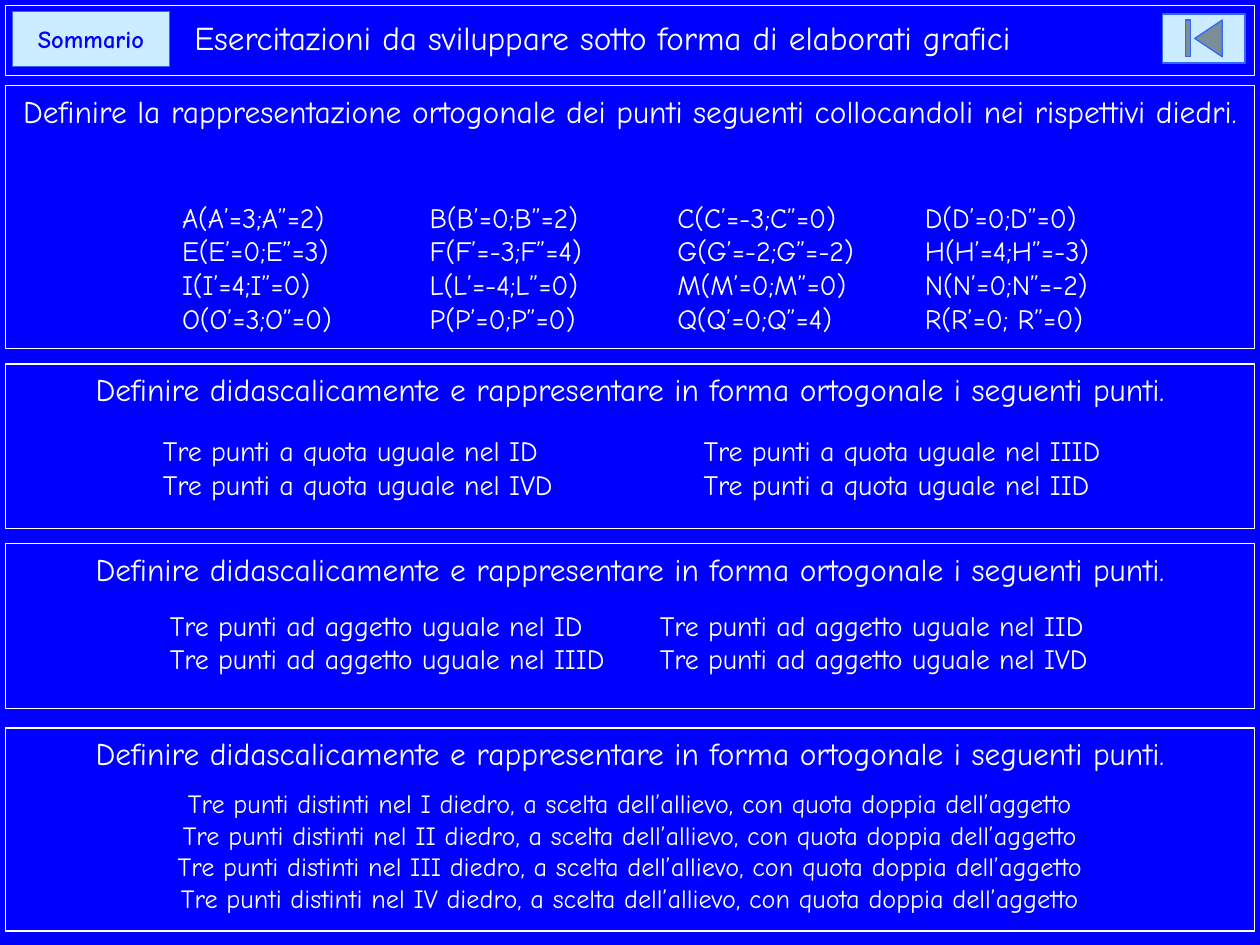
from lxml import etree
from pptx import Presentation
from pptx.dml.color import RGBColor
from pptx.enum.shapes import MSO_SHAPE
from pptx.enum.text import MSO_ANCHOR, MSO_AUTO_SIZE, PP_ALIGN
from pptx.oxml.ns import qn
from pptx.util import Pt

RECTANGLE = MSO_SHAPE.RECTANGLE
BUTTON_BLANK = MSO_SHAPE.ACTION_BUTTON_CUSTOM
BUTTON_BEGINNING = MSO_SHAPE.ACTION_BUTTON_BEGINNING
TOP, MIDDLE = MSO_ANCHOR.TOP, MSO_ANCHOR.MIDDLE
LEFT, CENTER = PP_ALIGN.LEFT, PP_ALIGN.CENTER
NO_AUTOFIT = MSO_AUTO_SIZE.NONE

FONT = "Comic Neue"
BLUE, WHITE, PALE_BLUE, BUTTON_EDGE = "0000FF", "FFFFFF", "CCECFF", "3366FF"
PANEL_LEFT, PANEL_WIDTH = 3, 714

TITLE = "Esercitazioni da sviluppare sotto forma di elaborati grafici"
PLACE_POINTS = (
    "Definire la rappresentazione ortogonale dei punti seguenti "
    "collocandoli nei rispettivi diedri."
)
DESCRIBE_POINTS = (
    "Definire didascalicamente e rappresentare in forma ortogonale "
    "i seguenti punti."
)
PANELS = [
    (49, 150, PLACE_POINTS),
    (208, 94, DESCRIBE_POINTS),
    (310.5, 94.5, DESCRIBE_POINTS),
    (416, 116, DESCRIBE_POINTS),
]
COORDINATES = [
    ["A(A’=3;A”=2)", "B(B’=0;B”=2)", "C(C’=-3;C”=0)", "D(D’=0;D”=0)"],
    ["E(E’=0;E”=3)", "F(F’=-3;F”=4)", "G(G’=-2;G”=-2)", "H(H’=4;H”=-3)"],
    ["I(I’=4;I”=0)", "L(L’=-4;L”=0)", "M(M’=0;M”=0)", "N(N’=0;N”=-2)"],
    ["O(O’=3;O”=0)", "P(P’=0;P”=0)", "Q(Q’=0;Q”=4)", "R(R’=0; R”=0)"],
]
EQUAL_HEIGHT = [
    [f"Tre punti a quota uguale nel {name}" for name in row]
    for row in (("ID", "IIID"), ("IVD", "IID"))
]
EQUAL_DEPTH = [
    [f"Tre punti ad aggetto uguale nel {name}" for name in row]
    for row in (("ID", "IID"), ("IIID", "IVD"))
]
DOUBLE_HEIGHT = [
    [
        f"Tre punti distinti nel {name} diedro, a scelta dell’allievo, "
        "con quota doppia dell’aggetto"
    ]
    for name in ("I", "II", "III", "IV")
]


def color(value):
    return RGBColor.from_string(value)


def set_attributes(target, values):
    for name, value in values.items():
        setattr(target, name, value)


def write(shape, lines, size, ink=WHITE, bold=False, align=CENTER, **frame_format):
    frame = shape.text_frame
    set_attributes(
        frame, {"word_wrap": True, "auto_size": NO_AUTOFIT, **frame_format}
    )
    frame.text = "\n".join(lines)
    for paragraph in frame.paragraphs:
        paragraph.alignment = align
        for run in paragraph.runs:
            set_attributes(run.font, {"name": FONT, "size": Pt(size), "bold": bold})
            run.font.color.rgb = color(ink)


def set_outline(shape, line_color, width):
    shape.line.color.rgb = color(line_color)
    shape.line.width = Pt(width)


def add_title(slide):
    title = slide.shapes.title
    box = {"left": 3, "top": 3, "width": PANEL_WIDTH, "height": 40}
    set_attributes(title, {name: Pt(value) for name, value in box.items()})
    set_outline(title, WHITE, 0.75)
    write(
        title, [TITLE], 19, align=LEFT, vertical_anchor=MIDDLE,
        margin_left=Pt(108), margin_top=Pt(0), margin_bottom=Pt(3.6),
    )


def add_button(slide, kind, left, top, width, height):
    button = slide.shapes.add_shape(kind, Pt(left), Pt(top), Pt(width), Pt(height))
    button.shadow.inherit = False
    button.fill.solid()
    button.fill.fore_color.rgb = color(PALE_BLUE)
    set_outline(button, BUTTON_EDGE, 0)
    return button


def add_panel(slide, top, height, heading):
    panel = slide.shapes.add_shape(
        RECTANGLE, Pt(PANEL_LEFT), Pt(top), Pt(PANEL_WIDTH), Pt(height)
    )
    panel.shadow.inherit = False
    panel.fill.background()
    set_outline(panel, WHITE, 0.75)
    write(panel, [heading], 18, vertical_anchor=TOP)


def add_tab_stops(paragraph, positions):
    properties = paragraph._p.get_or_add_pPr()
    tabs = etree.SubElement(properties, qn("a:tabLst"))
    for position in positions:
        etree.SubElement(tabs, qn("a:tab"), pos=str(Pt(position)), algn="l")


def add_rows(slide, rows, left, top, width, size, column_step=0, align=LEFT):
    line_height = size * 1.2
    box = slide.shapes.add_textbox(
        Pt(left), Pt(top), Pt(width), Pt(len(rows) * line_height)
    )
    lines = ["\t".join(row) for row in rows]
    margins = ("margin_left", "margin_right", "margin_top", "margin_bottom")
    write(box, lines, size, align=align, **dict.fromkeys(margins, Pt(0)))
    stops = [column_step * column for column in range(1, len(rows[0]))]
    if stops:
        for paragraph in box.text_frame.paragraphs:
            add_tab_stops(paragraph, stops)


def main():
    presentation = Presentation()
    presentation.slide_width, presentation.slide_height = Pt(720), Pt(540)
    slide = presentation.slides.add_slide(presentation.slide_layouts[5])
    slide.background.fill.solid()
    slide.background.fill.fore_color.rgb = color(BLUE)

    add_title(slide)
    summary = add_button(slide, BUTTON_BLANK, 7, 6.5, 90, 31.5)
    write(summary, ["Sommario"], 14, BLUE, True, vertical_anchor=MIDDLE)
    add_button(slide, BUTTON_BEGINNING, 664.5, 8, 47, 28)

    for top, height, heading in PANELS:
        add_panel(slide, top, height, heading)
    add_rows(slide, COORDINATES, 104, 114.5, 600, 16, 141.5)
    add_rows(slide, EQUAL_HEIGHT, 93, 248, 600, 16, 309)
    add_rows(slide, EQUAL_DEPTH, 97, 347.5, 600, 16, 280)
    add_rows(slide, DOUBLE_HEIGHT, PANEL_LEFT, 450, PANEL_WIDTH, 15, align=CENTER)

    presentation.save("out.pptx")


if __name__ == "__main__":
    main()
